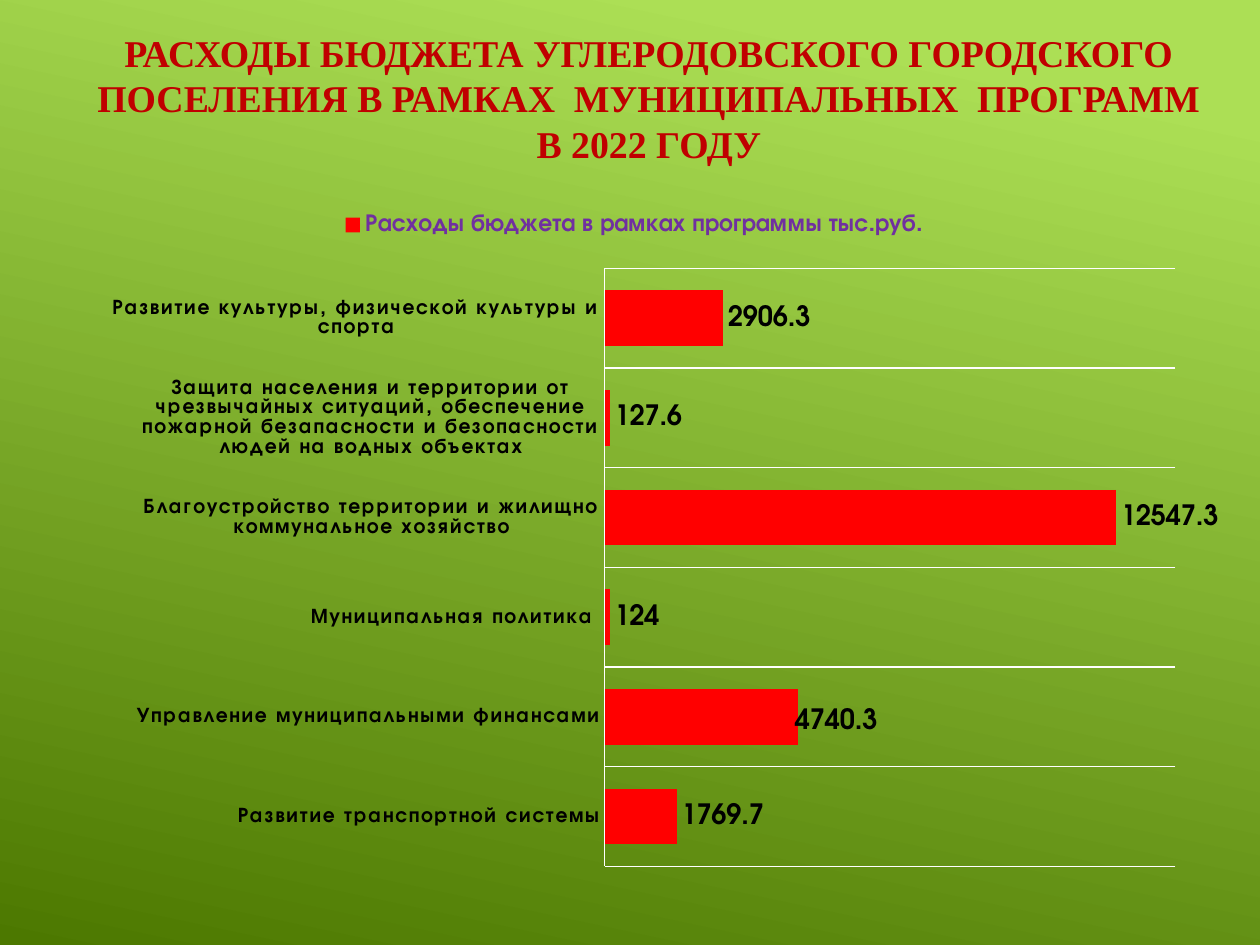
import pptx
import pptx.chart.data
import pptx.dml.color
import pptx.enum.chart
import pptx.enum.text
import pptx.oxml
import pptx.oxml.ns
import pptx.util
from pptx.util import Inches

TITLE = ("РАСХОДЫ БЮДЖЕТА УГЛЕРОДОВСКОГО ГОРОДСКОГО ПОСЕЛЕНИЯ "
         "В РАМКАХ  МУНИЦИПАЛЬНЫХ  ПРОГРАММ В 2022 ГОДУ")
SERIES_NAME = "Расходы бюджета в рамках программы тыс.руб."
EXPENSES = [
    ("Развитие транспортной системы", 1769.7),
    ("Управление муниципальными финансами", 4740.3),
    ("Муниципальная политика ", 124),
    ("Благоустройство территории и жилищно коммунальное хозяйство", 12547.3),
    ("Защита населения и территории от чрезвычайных ситуаций, обеспечение "
     "пожарной безапасности и безопасности людей на водных объектах", 127.6),
    ("Развитие культуры, физической культуры и спорта", 2906.3),
]
BACKGROUND = [(0.1, "ACDF55"), (1, "4C7800")]
CHART_FONT = "TeX Gyre Adventor"
LETTER_SPACING = 120  # hundredths of a point


def color(value):
    return pptx.dml.color.RGBColor.from_string(value)


def style_font(font, size, value, name=CHART_FONT, bold=True):
    font.name, font.size, font.bold = name, pptx.util.Pt(size), bold
    font.color.rgb = color(value)


def style_line(line):
    line.color.rgb = color("FFFFFF")
    line.width = pptx.util.Pt(0.75)


def manual_layout(**settings):
    """Return a c:layout element with the given manual settings, in schema order."""
    items = "".join(f'<c:{key} val="{value}"/>' for key, value in settings.items())
    return pptx.oxml.parse_xml(
        f'<c:layout {pptx.oxml.ns.nsdecls("c")}>'
        f"<c:manualLayout>{items}</c:manualLayout></c:layout>")


def add_title(slide):
    title = slide.shapes.title
    title.left, title.top = Inches(0.58), Inches(0.33)
    title.width, title.height = Inches(9.14), Inches(0.89)
    frame = title.text_frame
    frame.text = TITLE
    frame.word_wrap = True
    frame.auto_size = pptx.enum.text.MSO_AUTO_SIZE.NONE
    frame.vertical_anchor = pptx.enum.text.MSO_ANCHOR.MIDDLE
    paragraph = frame.paragraphs[0]
    paragraph.alignment = pptx.enum.text.PP_ALIGN.CENTER
    style_font(paragraph.font, 21.6, "C00000", "Times New Roman")


def add_expense_chart(slide):
    data = pptx.chart.data.CategoryChartData()
    data.categories = [name for name, _ in EXPENSES]
    data.add_series(SERIES_NAME, [amount for _, amount in EXPENSES])
    chart = slide.shapes.add_chart(
        pptx.enum.chart.XL_CHART_TYPE.BAR_CLUSTERED,
        Inches(0.67), Inches(1.58), Inches(9), Inches(5.45), data).chart
    style_font(chart.font, 10, "FFFFFF", bold=False)
    chart.has_title = False

    chart.has_legend = True
    chart.legend.position = pptx.enum.chart.XL_LEGEND_POSITION.TOP
    chart.legend.include_in_layout = False
    style_font(chart.legend.font, 14, "7030A0")

    names = chart.category_axis
    names.major_tick_mark = pptx.enum.chart.XL_TICK_MARK.NONE
    names.has_major_gridlines = True
    style_line(names.major_gridlines.format.line)
    style_line(names.format.line)
    style_font(names.tick_labels.font, 12, "000000")
    for properties in chart.element.xpath(".//c:catAx/c:txPr//a:defRPr"):
        properties.set("spc", str(LETTER_SPACING))

    amounts = chart.value_axis
    amounts.minimum_scale, amounts.maximum_scale = 0, 14000
    amounts.has_major_gridlines = False
    amounts.visible = False

    plot = chart.plots[0]
    plot.gap_width = 79
    plot.vary_by_categories = False
    bars = plot.series[0]
    bars.format.fill.solid()
    bars.format.fill.fore_color.rgb = color("FF0000")
    labels = bars.data_labels
    labels.show_value = True
    finance = bars.points[1].data_label
    for label in (labels, finance):
        label.position = pptx.enum.chart.XL_LABEL_POSITION.OUTSIDE_END
        style_font(label.font, 16, "000000")
    label_index = chart.element.xpath(".//c:dLbl/c:idx")[0]
    label_index.addnext(manual_layout(x=-0.007, y=0.007))

    plot_area = chart.element.xpath(".//c:plotArea")[0]
    for layout in plot_area.xpath("./c:layout"):
        plot_area.remove(layout)
    plot_area.insert(0, manual_layout(
        layoutTarget="inner", xMode="edge", yMode="edge",
        x=0.473, y=0.101, w=0.519, h=0.871))


def main():
    deck = pptx.Presentation()
    deck.slide_width, deck.slide_height = Inches(10), Inches(7.5)
    slide = deck.slides.add_slide(deck.slide_layouts[5])
    fill = slide.background.fill
    fill.gradient()
    fill.gradient_angle = 360 - 102
    for stop, (position, value) in zip(fill.gradient_stops, BACKGROUND):
        stop.position = position
        stop.color.rgb = color(value)
    add_title(slide)
    add_expense_chart(slide)
    deck.save("out.pptx")


if __name__ == "__main__":
    main()
